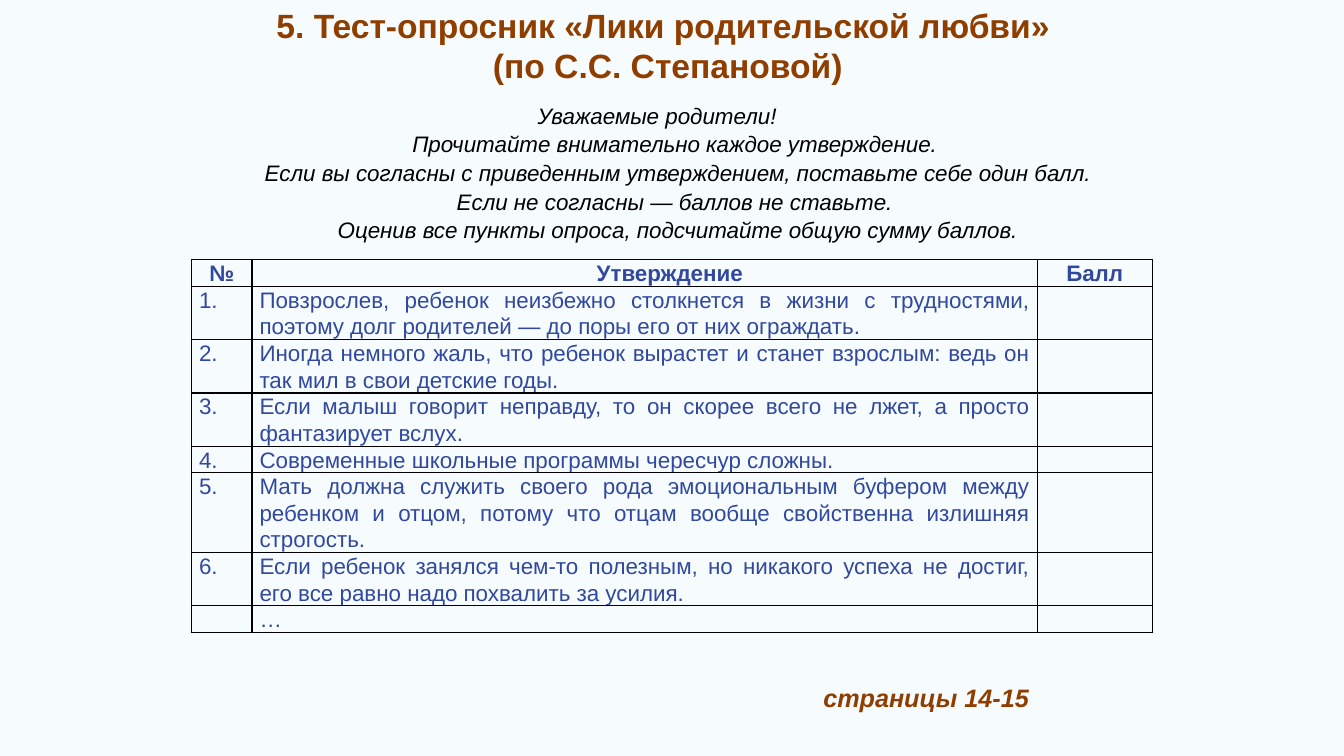
from dataclasses import dataclass

from lxml import etree
from pptx import Presentation
from pptx.dml.color import RGBColor
from pptx.enum import text
from pptx.oxml import ns
from pptx.util import Pt


@dataclass(frozen=True)
class Theme:
    font: str = "Arial"
    back: str = "F6FCFE"
    accent: str = "903E00"
    ink: str = "000000"
    table: str = "31489F"
    title: int = 24
    note: int = 18
    body: int = 16
    spacing: float = 1.07


THEME = Theme()
ALIGN = text.PP_ALIGN

TITLE = "5. Тест-опросник «Лики родительской любви» \v(по С.С.\u00a0Степановой)"
INTRO = "\v".join([
    "Уважаемые родители! ",
    "Прочитайте внимательно каждое утверждение. ",
    "Если вы согласны с приведенным утверждением, поставьте себе один балл. "
    "Если не согласны — баллов не ставьте. ",
    "Оценив все пункты опроса, подсчитайте общую сумму баллов.",
])
HEADER = ("№", "Утверждение", "Балл")
STATEMENTS = [
    ("Повзрослев, ребенок неизбежно столкнется в жизни с трудностями, "
     "поэтому долг родителей — до поры его от них ограждать.", 2),
    ("Иногда немного жаль, что ребенок вырастет и станет взрослым: "
     "ведь он так мил в свои детские годы.", 2),
    ("Если малыш говорит неправду, то он скорее всего не лжет, "
     "а просто фантазирует вслух.", 2),
    ("Современные школьные программы чересчур сложны.", 1),
    ("Мать должна служить своего рода эмоциональным буфером между ребенком "
     "и отцом, потому что отцам вообще свойственна излишняя строгость.", 3),
    ("Если ребенок занялся чем-то полезным, но никакого успеха не достиг, "
     "его все равно надо похвалить за усилия.", 2),
]
COLUMNS = (43.2, 560.9, 82.1)
LINE = 19


def place(sp, box):
    sp.left, sp.top, sp.width, sp.height = (Pt(v) for v in box)


def style(p, size, color, bold=False, italic=False, align=ALIGN.CENTER):
    p.alignment = align
    p.font.name = THEME.font
    p.font.size = Pt(size)
    p.font.bold = bold
    p.font.italic = italic
    p.font.color.rgb = RGBColor.from_string(color)


def fill_frame(sp, words):
    tf = sp.text_frame
    tf.word_wrap = True
    tf.auto_size = text.MSO_AUTO_SIZE.NONE
    tf.vertical_anchor = text.MSO_ANCHOR.TOP
    p = tf.paragraphs[0]
    p.text = words
    p.space_before = Pt(0)
    return p


def add_title(s, box):
    sp = s.shapes.title
    place(sp, box)
    style(fill_frame(sp, TITLE), THEME.title, THEME.accent, bold=True)


def add_intro(s, box):
    sp = s.placeholders[1]
    place(sp, box)
    p = fill_frame(sp, INTRO)
    style(p, THEME.body, THEME.ink, italic=True)
    p.line_spacing = THEME.spacing
    p.space_after = Pt(8)
    pPr = p._p.get_or_add_pPr()
    pPr.set("marL", str(Pt(25.2)))
    pPr.set("indent", str(Pt(-25.2)))
    pPr.insert_element_before(
        etree.Element(ns.qn("a:buNone")), "a:tabLst", "a:defRPr", "a:extLst")


def add_borders(cell):
    tcPr = cell._tc.get_or_add_tcPr()
    for side in ("lnL", "lnR", "lnT", "lnB"):
        ln = etree.SubElement(tcPr, ns.qn(f"a:{side}"), w=str(Pt(1)))
        fill = etree.SubElement(ln, ns.qn("a:solidFill"))
        etree.SubElement(fill, ns.qn("a:srgbClr"), val=THEME.ink)


def fill_cell(cell, words, align, bold):
    add_borders(cell)
    cell.fill.background()
    cell.margin_left = cell.margin_right = Pt(5.4)
    cell.margin_top = cell.margin_bottom = 0
    p = cell.text_frame.paragraphs[0]
    style(p, THEME.body, THEME.table, bold=bold, align=align)
    if words:
        p.text = words
        p.line_spacing = THEME.spacing
    else:
        p._p.get_or_add_endParaRPr().set("sz", str(THEME.body * 100))


def add_questions(s, left, top):
    rows = [(HEADER, 1)]
    rows += [((f"{n}.", words, ""), lines)
             for n, (words, lines) in enumerate(STATEMENTS, 1)]
    rows.append((("", "…", ""), 1))
    height = LINE * sum(lines for _, lines in rows)
    table = s.shapes.add_table(len(rows), len(COLUMNS), Pt(left), Pt(top),
                               Pt(sum(COLUMNS)), Pt(height)).table
    table.first_row = table.horz_banding = False
    for column, width in zip(table.columns, COLUMNS):
        column.width = Pt(width)
    for i, (words, lines) in enumerate(rows):
        table.rows[i].height = Pt(LINE * lines)
        for j, word in enumerate(words):
            align = ALIGN.CENTER if i == 0 else ALIGN.JUSTIFY
            fill_cell(table.cell(i, j), word, align, bold=i == 0)
    heading = table.cell(0, 1).text_frame.paragraphs[0]
    heading._p.get_or_add_pPr().set("marL", str(Pt(36)))
    heading._p.get_or_add_pPr().set("indent", "0")


def add_pages(s, box):
    sp = s.shapes.add_textbox(*(Pt(v) for v in box))
    style(fill_frame(sp, "страницы 14-15"), THEME.note, THEME.accent,
          bold=True, italic=True, align=ALIGN.LEFT)


def main():
    prs = Presentation()
    prs.slide_width, prs.slide_height = Pt(960), Pt(540)
    s = prs.slides.add_slide(prs.slide_layouts[1])
    s.background.fill.solid()
    s.background.fill.fore_color.rgb = RGBColor.from_string(THEME.back)
    add_title(s, (136.8, 0, 680.4, 65.5))
    add_intro(s, (148.3, 67.7, 646.6, 112))
    add_questions(s, 136.8, 185.6)
    add_pages(s, (581, 483.8, 213.8, 29))
    prs.save("out.pptx")


if __name__ == "__main__":
    main()
